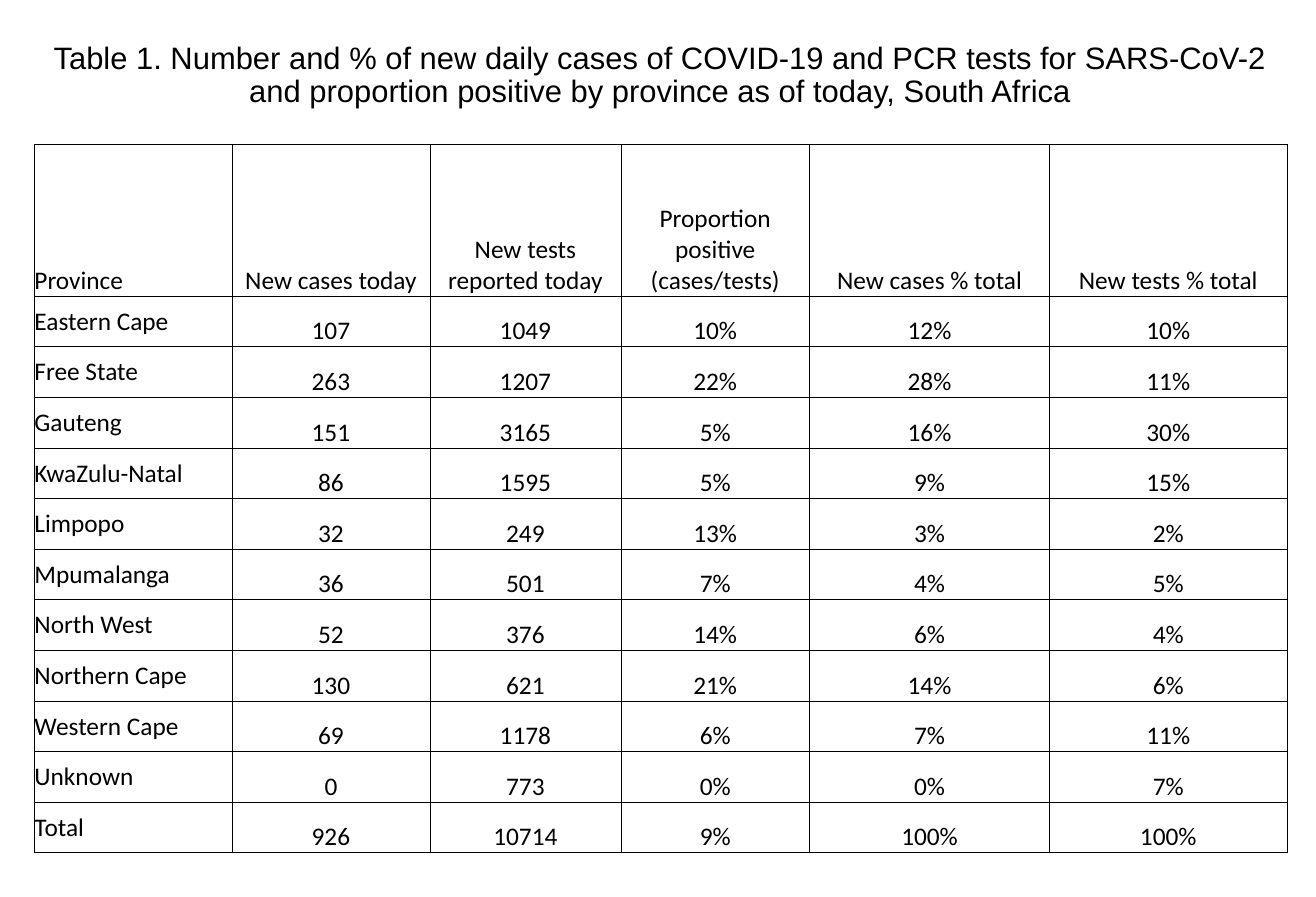
from dataclasses import dataclass

from lxml.etree import SubElement
from pptx import Presentation
from pptx.dml.color import RGBColor
from pptx.enum.text import MSO_ANCHOR, PP_ALIGN
from pptx.oxml.ns import qn
from pptx.slide import Slide
from pptx.table import _Cell
from pptx.text.text import _Paragraph
from pptx.util import Cm, Inches, Pt

BLACK = RGBColor(0, 0, 0)
SLIDE_WIDTH = Cm(66)
SLIDE_HEIGHT = Cm(45)

# Grid: percentages of the slide, then of the table width
LEFT, WIDTH = 2.58, 95.22
TITLE_TOP, TITLE_HEIGHT = 4.74, 11.29
TABLE_TOP, ROW_HEIGHT = 16.1, 5.64
HEADER_ROWS = 3

TITLE = ("Table 1. Number and % of new daily cases of COVID-19 and PCR tests for SARS-CoV-2 "
         "and proportion positive by province as of today, South Africa")


@dataclass
class Column:
    heading: str
    share: float


@dataclass
class Province:
    name: str
    cases: int
    tests: int
    positive: int
    cases_share: int
    tests_share: int

    def texts(self) -> list[str]:
        shares = (self.positive, self.cases_share, self.tests_share)
        return [self.name, str(self.cases), str(self.tests), *(f"{share}%" for share in shares)]


COLUMNS = [
    Column("Province", 15.8),
    Column("New cases today", 15.8),
    Column("New tests reported today", 15.24),
    Column("Proportion positive (cases/tests)", 15.06),
    Column("New cases % total", 19.15),
    Column("New tests % total", 18.95),
]
PROVINCES = [
    Province("Eastern Cape", 107, 1049, 10, 12, 10),
    Province("Free State", 263, 1207, 22, 28, 11),
    Province("Gauteng", 151, 3165, 5, 16, 30),
    Province("KwaZulu-Natal", 86, 1595, 5, 9, 15),
    Province("Limpopo", 32, 249, 13, 3, 2),
    Province("Mpumalanga", 36, 501, 7, 4, 5),
    Province("North West", 52, 376, 14, 6, 4),
    Province("Northern Cape", 130, 621, 21, 14, 6),
    Province("Western Cape", 69, 1178, 6, 7, 11),
    Province("Unknown", 0, 773, 0, 0, 7),
    Province("Total", 926, 10714, 9, 100, 100),
]


def across(percent: float) -> int:
    return round(SLIDE_WIDTH * percent / 100)


def down(percent: float) -> int:
    return round(SLIDE_HEIGHT * percent / 100)


def format_text(para: _Paragraph, font: str, size: int, align: PP_ALIGN) -> None:
    para.alignment = align
    for span in para.runs:
        span.font.name = font
        span.font.size = Pt(size)
        span.font.color.rgb = BLACK


def add_borders(cell: _Cell) -> None:
    properties = cell._tc.get_or_add_tcPr()
    for side in ("a:lnL", "a:lnR", "a:lnT", "a:lnB"):
        line = SubElement(properties, qn(side), w=str(Pt(1)))
        fill = SubElement(line, qn("a:solidFill"))
        SubElement(fill, qn("a:srgbClr"), val=str(BLACK))


def fill_cell(cell: _Cell, text: str, align: PP_ALIGN, anchor: MSO_ANCHOR) -> None:
    cell.text_frame.text = text
    cell.vertical_anchor = anchor
    cell.margin_left = cell.margin_right = cell.margin_top = Inches(0.01)
    cell.margin_bottom = 0
    format_text(cell.text_frame.paragraphs[0], "Calibri", 36, align)
    add_borders(cell)
    cell.fill.background()


def add_title(page: Slide) -> None:
    box = page.shapes.add_textbox(across(LEFT), down(TITLE_TOP), across(WIDTH), down(TITLE_HEIGHT))
    frame = box.text_frame
    frame.word_wrap = True
    frame.vertical_anchor = MSO_ANCHOR.TOP
    frame.margin_top = 0
    frame.text = TITLE
    para = frame.paragraphs[0]
    para.line_spacing = 0.9
    format_text(para, "Arial", 44, PP_ALIGN.CENTER)


def add_province_table(page: Slide) -> None:
    rows = [[column.heading for column in COLUMNS]]
    rows += [province.texts() for province in PROVINCES]
    height = ROW_HEIGHT * (HEADER_ROWS + len(PROVINCES))
    table = page.shapes.add_table(len(rows), len(COLUMNS), across(LEFT), down(TABLE_TOP),
                                  across(WIDTH), down(height)).table
    table.first_row = table.horz_banding = False
    for table_column, column in zip(table.columns, COLUMNS):
        table_column.width = across(WIDTH * column.share / 100)
    for row, texts in enumerate(rows):
        table.rows[row].height = down(ROW_HEIGHT * (1 if row else HEADER_ROWS))
        for column, text in enumerate(texts):
            align = PP_ALIGN.CENTER if column else PP_ALIGN.LEFT
            is_name = row > 0 and column == 0
            anchor = MSO_ANCHOR.MIDDLE if is_name else MSO_ANCHOR.BOTTOM
            fill_cell(table.cell(row, column), text, align, anchor)


def main() -> None:
    deck = Presentation()
    deck.slide_width = SLIDE_WIDTH
    deck.slide_height = SLIDE_HEIGHT
    page = deck.slides.add_slide(deck.slide_layouts[6])
    add_title(page)
    add_province_table(page)
    deck.save("out.pptx")


if __name__ == "__main__":
    main()
